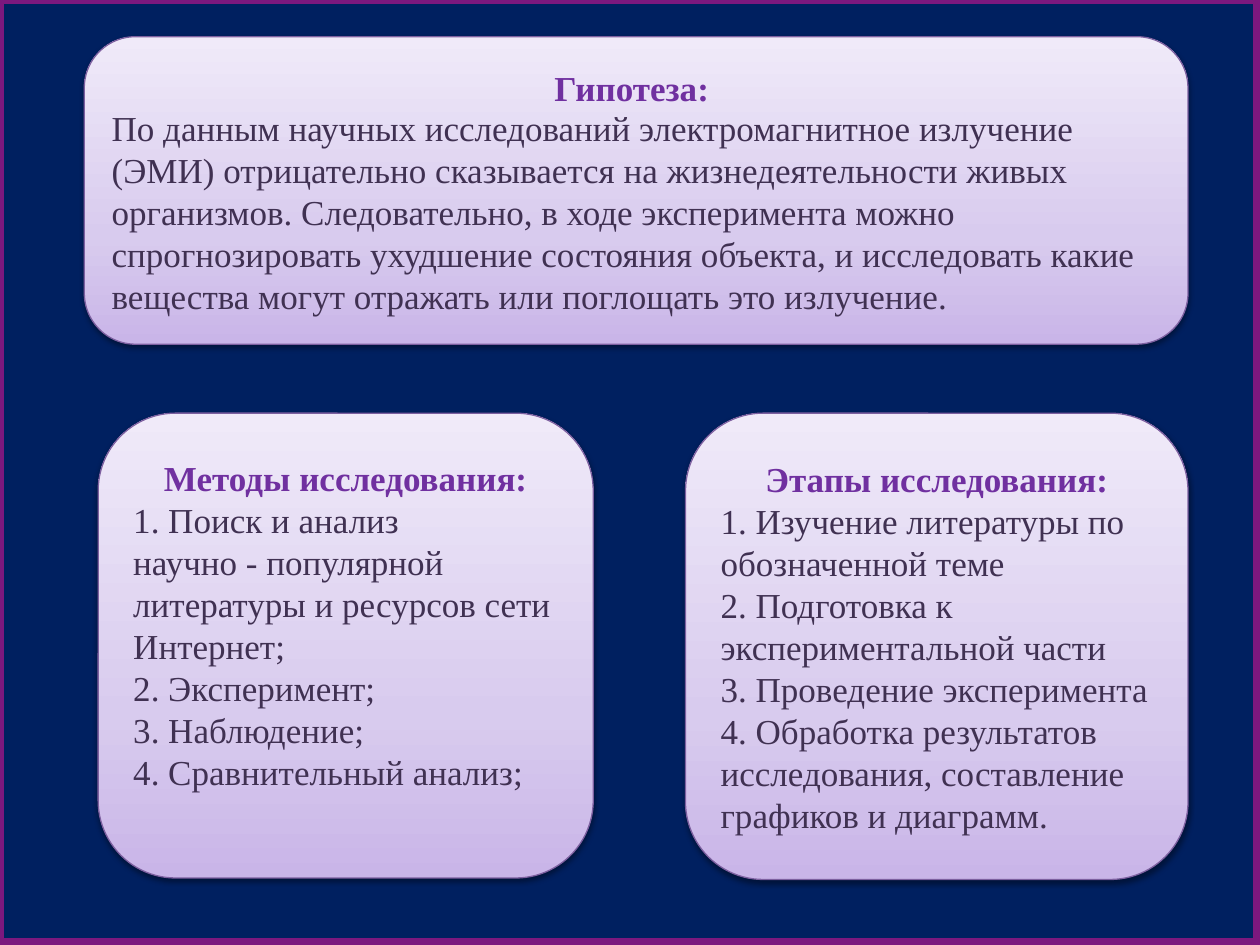
"""Build a slide with a research hypothesis, methods and stages on rounded cards."""
import pptx
import pptx.dml.color
import pptx.enum.shapes
import pptx.enum.text
import pptx.oxml
import pptx.oxml.ns
import pptx.util

Cm = pptx.util.Cm
Pt = pptx.util.Pt
Align = pptx.enum.text.PP_ALIGN
Anchor = pptx.enum.text.MSO_ANCHOR
Preset = pptx.enum.shapes.MSO_SHAPE

TITLE = "Гипотеза: "
HYPOTHESIS = [
    "По данным научных исследований электромагнитное излучение (ЭМИ) "
    "отрицательно сказывается на жизнедеятельности живых организмов. "
    "Следовательно, в ходе эксперимента можно спрогнозировать ухудшение "
    "состояния объекта, и исследовать какие вещества могут отражать или "
    "поглощать это излучение.",
]
METHODS_HEADING = "Методы исследования:"
METHODS = [
    "1. Поиск и анализ",
    "научно - популярной литературы и ресурсов сети Интернет;",
    "2. Эксперимент;",
    "3. Наблюдение;",
    "4. Сравнительный анализ;",
]
STAGES_HEADING = "Этапы исследования:"
STAGES = [
    "1. Изучение литературы по обозначенной теме",
    "2. Подготовка к экспериментальной части",
    "3. Проведение эксперимента",
    "4. Обработка результатов исследования, составление графиков и диаграмм.",
]

THEME = {
    "background": "002060",
    "frame": "7C187E",
    "frame_width": 6,
    "card_line": "7D60A0",
    "card_line_width": 0.75,
    "card_stops": [(0, "C9B5E8"), (35, "D8CBEE"), (100, "F0EAF9")],
    "heading": {"name": "Times New Roman", "size": Pt(20), "bold": True},
    "heading_color": "7030A0",
    "text": {"name": "Times New Roman", "size": Pt(20), "bold": False},
    "text_color": "403152",
}

SLIDE_SIZE = (25.4, 19.05)
LINE_HEIGHT = 0.85
INSET = 0.13
HYPOTHESIS_BOX = (1.7, 0.74, 22.25, 6.2)
TITLE_BOX = (1.7, 1.33, 22.25, LINE_HEIGHT)
METHODS_BOX = (1.98, 8.33, 9.98, 9.37)
STAGES_BOX = (13.82, 8.33, 10.13, 9.4)


def color(value):
    return pptx.dml.color.RGBColor.from_string(value)


def set_values(target, values):
    for name, value in values.items():
        setattr(target, name, value)


def append_xml(parent, body):
    parent.append(pptx.oxml.parse_xml(body.replace(
        ">", " " + pptx.oxml.ns.nsdecls("a") + ">", 1)))


def place(shape, box):
    set_values(shape, dict(zip(("left", "top", "width", "height"), map(Cm, box))))


def style_line(shape, line_color, width):
    shape.line.color.rgb = color(line_color)
    shape.line.width = Pt(width)


def style_card(shape):
    properties = shape.element.spPr
    if shape.is_placeholder:
        append_xml(properties, '<a:prstGeom prst="roundRect"><a:avLst/></a:prstGeom>')
    stops = "".join(
        f'<a:gs pos="{position * 1000}"><a:srgbClr val="{value}"/></a:gs>'
        for position, value in THEME["card_stops"])
    append_xml(properties, f'<a:gradFill rotWithShape="1"><a:gsLst>{stops}</a:gsLst>'
                           '<a:lin ang="16200000" scaled="0"/></a:gradFill>')
    style_line(shape, THEME["card_line"], THEME["card_line_width"])
    append_xml(properties, '<a:effectLst><a:outerShdw blurRad="40000" dist="20000" '
                           'dir="5400000" rotWithShape="0"><a:srgbClr val="000000">'
                           '<a:alpha val="38000"/></a:srgbClr></a:outerShdw></a:effectLst>')


def write(shape, heading, lines, top=INSET, bottom=INSET, side=0.25):
    frame = shape.text_frame
    set_values(frame, {
        "word_wrap": True, "auto_size": pptx.enum.text.MSO_AUTO_SIZE.NONE,
        "vertical_anchor": Anchor.MIDDLE,
        "margin_left": Cm(side), "margin_right": Cm(side),
        "margin_top": Cm(top), "margin_bottom": Cm(bottom)})
    entries = [(heading, "heading", Align.CENTER)] if heading else []
    entries += [(line, "text", Align.LEFT) for line in lines]
    for index, (text, role, alignment) in enumerate(entries):
        paragraph = frame.add_paragraph() if index else frame.paragraphs[0]
        set_values(paragraph, {"alignment": alignment, "line_spacing": 1.0,
                               "space_before": Pt(0), "space_after": Pt(0)})
        paragraph_format = paragraph._p.get_or_add_pPr()
        paragraph_format.set("marL", "0")
        paragraph_format.set("indent", "0")
        append_xml(paragraph_format, "<a:buNone></a:buNone>")
        run = paragraph.add_run()
        run.text = text
        set_values(run.font, THEME[role])
        run.font.color.rgb = color(THEME[role + "_color"])


def main():
    presentation = pptx.Presentation()
    presentation.slide_width, presentation.slide_height = map(Cm, SLIDE_SIZE)
    slide = presentation.slides.add_slide(presentation.slide_layouts[3])
    title, methods, stages = slide.placeholders

    background = slide.shapes.add_shape(Preset.RECTANGLE, *map(Cm, (-0.03, -0.03, *SLIDE_SIZE)))
    background.shadow.inherit = False
    background.fill.solid()
    background.fill.fore_color.rgb = color(THEME["background"])
    style_line(background, THEME["frame"], THEME["frame_width"])

    hypothesis = slide.shapes.add_shape(Preset.ROUNDED_RECTANGLE, *map(Cm, HYPOTHESIS_BOX))
    for shape in (background, hypothesis):
        title.element.addprevious(shape.element)

    for shape, box in ((title, TITLE_BOX), (methods, METHODS_BOX), (stages, STAGES_BOX)):
        place(shape, box)
    for card in (hypothesis, methods, stages):
        style_card(card)

    write(title, TITLE, [], top=0, bottom=0)
    write(hypothesis, None, HYPOTHESIS, top=INSET + LINE_HEIGHT)
    write(methods, METHODS_HEADING, METHODS, bottom=INSET + LINE_HEIGHT)
    write(stages, STAGES_HEADING, STAGES)
    presentation.save("out.pptx")


if __name__ == "__main__":
    main()
